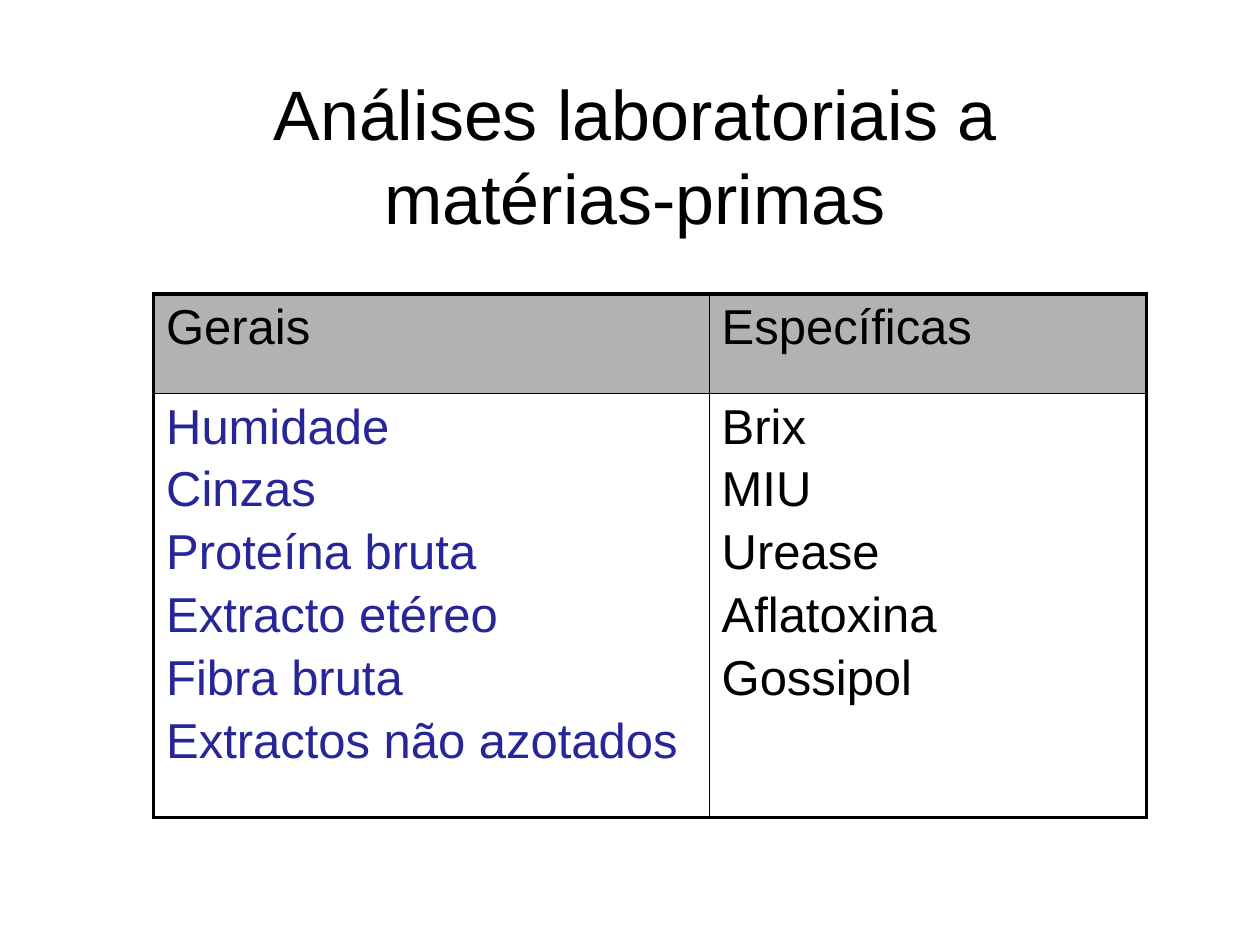
from dataclasses import dataclass

from lxml import etree
from pptx import Presentation
from pptx.dml.color import RGBColor
from pptx.enum.text import MSO_ANCHOR, PP_ALIGN
from pptx.oxml.ns import qn
from pptx.table import _Cell
from pptx.text.text import _Paragraph
from pptx.util import Cm, Pt

MIDDLE = MSO_ANCHOR.MIDDLE
CENTER = PP_ALIGN.CENTER
FONT = "Arial"
COLORS = {"black": "000000", "blue": "262699", "gray": "B2B2B2", "white": "FFFFFF"}
OUTER_LINE = Pt(2.25)
INNER_LINE = Pt(1)
COLUMN_WIDTHS = [Cm(11.2), Cm(8.81)]
ROW_HEIGHTS = [Cm(2), Cm(8.55)]


@dataclass
class AnalysisGroup:
    heading: str
    analyses: list[str]
    color: str


GROUPS = [
    AnalysisGroup(
        "Gerais",
        ["Humidade", "Cinzas", "Proteína bruta", "Extracto etéreo",
         "Fibra bruta", "Extractos não azotados"],
        "blue",
    ),
    AnalysisGroup(
        "Específicas", ["Brix", "MIU", "Urease", "Aflatoxina", "Gossipol"], "black"
    ),
]


def add_run(paragraph: _Paragraph, text: str, size: float, color: str) -> None:
    run = paragraph.add_run()
    run.text = text
    run.font.name = FONT
    run.font.size = Pt(size)
    run.font.color.rgb = RGBColor.from_string(COLORS[color])


def set_borders(cell: _Cell, row: int, column: int) -> None:
    outer_sides = {
        "L": column == 0,
        "R": column == len(COLUMN_WIDTHS) - 1,
        "T": row == 0,
        "B": row == len(ROW_HEIGHTS) - 1,
    }
    properties = cell._tc.get_or_add_tcPr()
    for side, is_outer in outer_sides.items():
        width = OUTER_LINE if is_outer else INNER_LINE
        border = etree.SubElement(properties, qn(f"a:ln{side}"), w=str(int(width)))
        fill = etree.SubElement(border, qn("a:solidFill"))
        etree.SubElement(fill, qn("a:srgbClr"), val=COLORS["black"])


def fill_cell(cell: _Cell, lines: list[str], color: str, background: str) -> None:
    cell.margin_left = cell.margin_right = Cm(0.25)
    cell.margin_top = cell.margin_bottom = Cm(0.13)
    cell.fill.solid()
    cell.fill.fore_color.rgb = RGBColor.from_string(COLORS[background])
    frame = cell.text_frame
    for index, line in enumerate(lines):
        paragraph = frame.add_paragraph() if index else frame.paragraphs[0]
        paragraph.space_before = Pt(4.7)
        add_run(paragraph, line, 28, color)


def main() -> None:
    presentation = Presentation()
    presentation.slide_width = Cm(25.4)
    presentation.slide_height = Cm(19.05)
    slide = presentation.slides.add_slide(presentation.slide_layouts[5])

    title = slide.shapes.title
    title.left, title.top = Cm(2.5), Cm(1.52)
    title.width, title.height = Cm(20.6), Cm(3.18)
    title.text_frame.word_wrap = True
    title.text_frame.vertical_anchor = MIDDLE
    heading = title.text_frame.paragraphs[0]
    heading.alignment = CENTER
    add_run(heading, "Análises laboratoriais a matérias-primas", 40, "black")

    table = slide.shapes.add_table(
        len(ROW_HEIGHTS), len(GROUPS), Cm(3.1), Cm(5.93),
        sum(COLUMN_WIDTHS), sum(ROW_HEIGHTS),
    ).table
    table.first_row = table.horz_banding = False
    for row, height in zip(table.rows, ROW_HEIGHTS):
        row.height = height
    for index, (group, width) in enumerate(zip(GROUPS, COLUMN_WIDTHS)):
        table.columns[index].width = width
        header, body = table.cell(0, index), table.cell(1, index)
        set_borders(header, 0, index)
        set_borders(body, 1, index)
        fill_cell(header, [group.heading], "black", "gray")
        fill_cell(body, group.analyses, group.color, "white")

    presentation.save("out.pptx")


if __name__ == "__main__":
    main()
